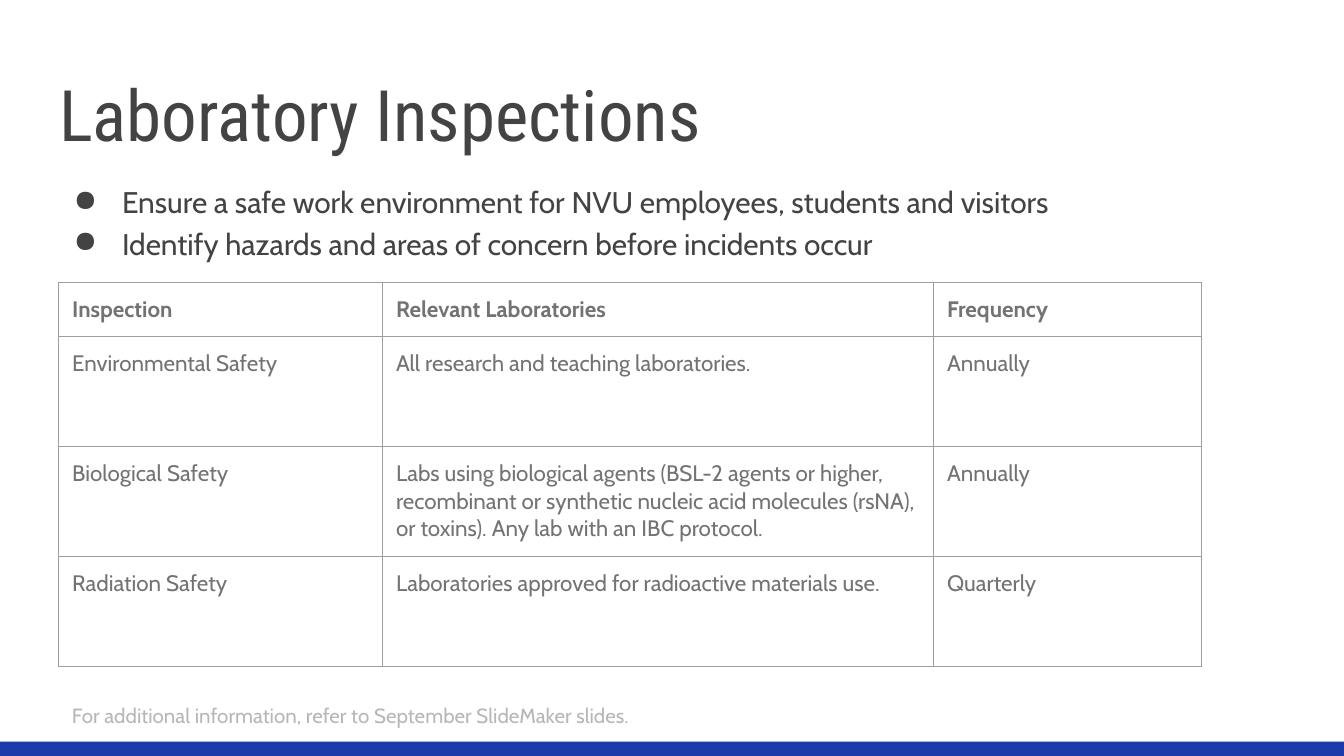
import pptx
import pptx.util
import pptx.dml.color
import pptx.enum.shapes
import pptx.enum.text
import pptx.oxml
import pptx.oxml.ns

Pt = pptx.util.Pt
Anchor = pptx.enum.text.MSO_ANCHOR
AutoSize = pptx.enum.text.MSO_AUTO_SIZE

DARK, GREY, PALE = "434343", "737373", "B7B7B7"
BLUE, BORDER = "1C3AA9", "9E9E9E"
INSET = Pt(7.2)

GOALS = [
    "Ensure a safe work environment for NVU employees, students and visitors",
    "Identify hazards and areas of concern before incidents occur",
]
INSPECTIONS = [
    ("Inspection", "Relevant Laboratories", "Frequency"),
    ("Environmental Safety", "All research and teaching laboratories.", "Annually"),
    ("Biological Safety",
     "Labs using biological agents (BSL-2 agents or higher, recombinant or "
     "synthetic nucleic acid molecules (rsNA), or toxins). Any lab with an "
     "IBC protocol.", "Annually"),
    ("Radiation Safety", "Laboratories approved for radioactive materials use.",
     "Quarterly"),
]
COLUMN_WIDTHS = (173.5, 295.2, 143.3)
ROW_HEIGHTS = (29, 59, 59, 59)


def rgb(color):
    return pptx.dml.color.RGBColor.from_string(color)


def set_attributes(target, values):
    for name, value in values.items():
        setattr(target, name, value)


def place(shape, left, top, width, height):
    set_attributes(shape, {"left": Pt(left), "top": Pt(top),
                           "width": Pt(width), "height": Pt(height)})


def write(paragraph, text, font, size, color, bold=False):
    run = paragraph.add_run()
    run.text = text
    set_attributes(run.font, {"name": font, "size": Pt(size), "bold": bold})
    run.font.color.rgb = rgb(color)


def format_frame(frame, anchor=Anchor.TOP, auto_size=AutoSize.NONE):
    set_attributes(frame, {
        "word_wrap": True, "auto_size": auto_size, "vertical_anchor": anchor,
        "margin_left": INSET, "margin_right": INSET,
        "margin_top": INSET, "margin_bottom": INSET})


def add_text_box(slide, box, auto_size=AutoSize.NONE):
    text_box = slide.shapes.add_textbox(*(Pt(length) for length in box))
    format_frame(text_box.text_frame, auto_size=auto_size)
    return text_box.text_frame


def add_bullet(paragraph, color):
    properties = paragraph._p.get_or_add_pPr()
    properties.set("marL", str(Pt(36)))
    properties.set("indent", str(-Pt(26)))
    namespace = pptx.oxml.ns.nsdecls("a")
    for xml in (f'<a:buClr {namespace}><a:srgbClr val="{color}"/></a:buClr>',
                f'<a:buChar {namespace} char="●"/>'):
        properties.append(pptx.oxml.parse_xml(xml))


def add_borders(cell, color, width):
    properties = cell._tc.get_or_add_tcPr()
    for index, side in enumerate(("lnL", "lnR", "lnT", "lnB")):
        properties.insert(index, pptx.oxml.parse_xml(
            f'<a:{side} {pptx.oxml.ns.nsdecls("a")} w="{Pt(width)}">'
            f'<a:solidFill><a:srgbClr val="{color}"/></a:solidFill></a:{side}>'))


def add_title(slide, text):
    title = slide.shapes.title
    place(title, 24.5, 25.2, 671, 65.5)
    format_frame(title.text_frame, Anchor.BOTTOM)
    paragraph = title.text_frame.paragraphs[0]
    set_attributes(paragraph, {"alignment": pptx.enum.text.PP_ALIGN.LEFT,
                               "line_spacing": 1.0, "space_before": Pt(0)})
    write(paragraph, text, "Roboto Condensed", 38, DARK)


def add_goals(slide):
    frame = add_text_box(slide, (22.3, 88.6, 671, 269))
    for index, goal in enumerate(GOALS):
        paragraph = frame.add_paragraph() if index else frame.paragraphs[0]
        paragraph.line_spacing = 1.15
        add_bullet(paragraph, DARK)
        write(paragraph, goal, "Cabin", 16, DARK)


def add_inspection_table(slide):
    table = slide.shapes.add_table(
        len(ROW_HEIGHTS), len(COLUMN_WIDTHS), Pt(31.5), Pt(151.2),
        Pt(sum(COLUMN_WIDTHS)), Pt(sum(ROW_HEIGHTS))).table
    set_attributes(table, {"first_row": False, "horz_banding": False})
    for column, width in zip(table.columns, COLUMN_WIDTHS):
        column.width = Pt(width)
    for row_index, (row, height) in enumerate(zip(table.rows, ROW_HEIGHTS)):
        row.height = Pt(height)
        for cell, text in zip(row.cells, INSPECTIONS[row_index]):
            set_attributes(cell, {
                "margin_left": INSET, "margin_right": INSET,
                "margin_top": INSET, "margin_bottom": INSET,
                "vertical_anchor": Anchor.TOP})
            cell.fill.background()
            add_borders(cell, BORDER, 0.75)
            write(cell.text_frame.paragraphs[0], text, "Cabin", 12, GREY,
                  bold=row_index == 0)


def add_bottom_bar(slide):
    bar = slide.shapes.add_shape(pptx.enum.shapes.MSO_SHAPE.RECTANGLE,
                                 Pt(0), Pt(397.4), Pt(720), Pt(7.6))
    bar.shadow.inherit = False
    bar.fill.solid()
    bar.fill.fore_color.rgb = rgb(BLUE)
    bar.line.fill.background()


def main():
    presentation = pptx.Presentation()
    set_attributes(presentation, {"slide_width": Pt(720), "slide_height": Pt(405)})
    slide = presentation.slides.add_slide(presentation.slide_layouts[5])
    slide.background.fill.solid()
    slide.background.fill.fore_color.rgb = rgb("FFFFFF")

    add_bottom_bar(slide)
    add_title(slide, "Laboratory Inspections")
    add_goals(slide)
    add_inspection_table(slide)

    # Footnote
    footnote = add_text_box(slide, (31.5, 370, 344, 28),
                            AutoSize.SHAPE_TO_FIT_TEXT)
    write(footnote.paragraphs[0],
          "For additional information, refer to September SlideMaker slides.",
          "Cabin", 11, PALE)

    presentation.save("out.pptx")


if __name__ == "__main__":
    main()
